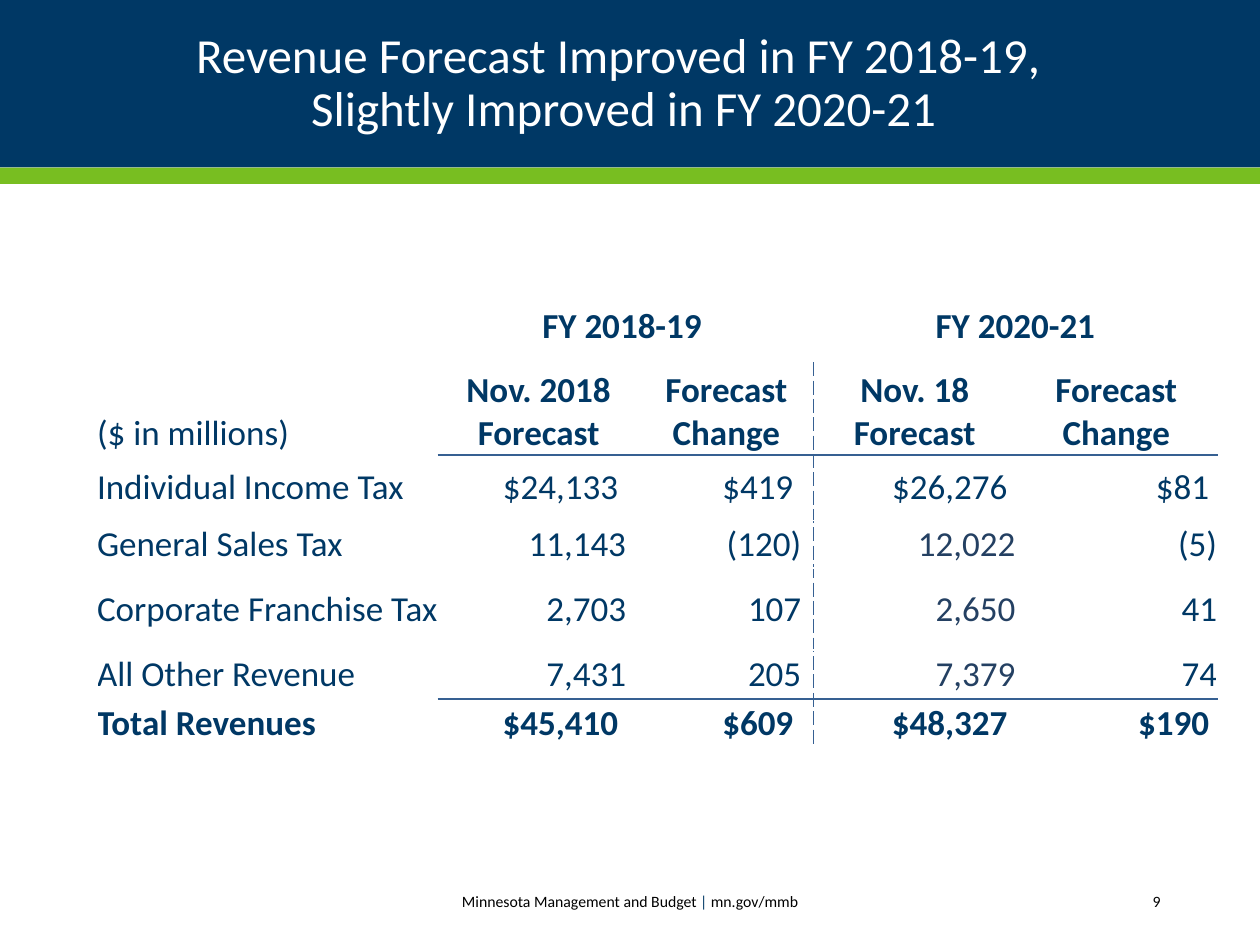
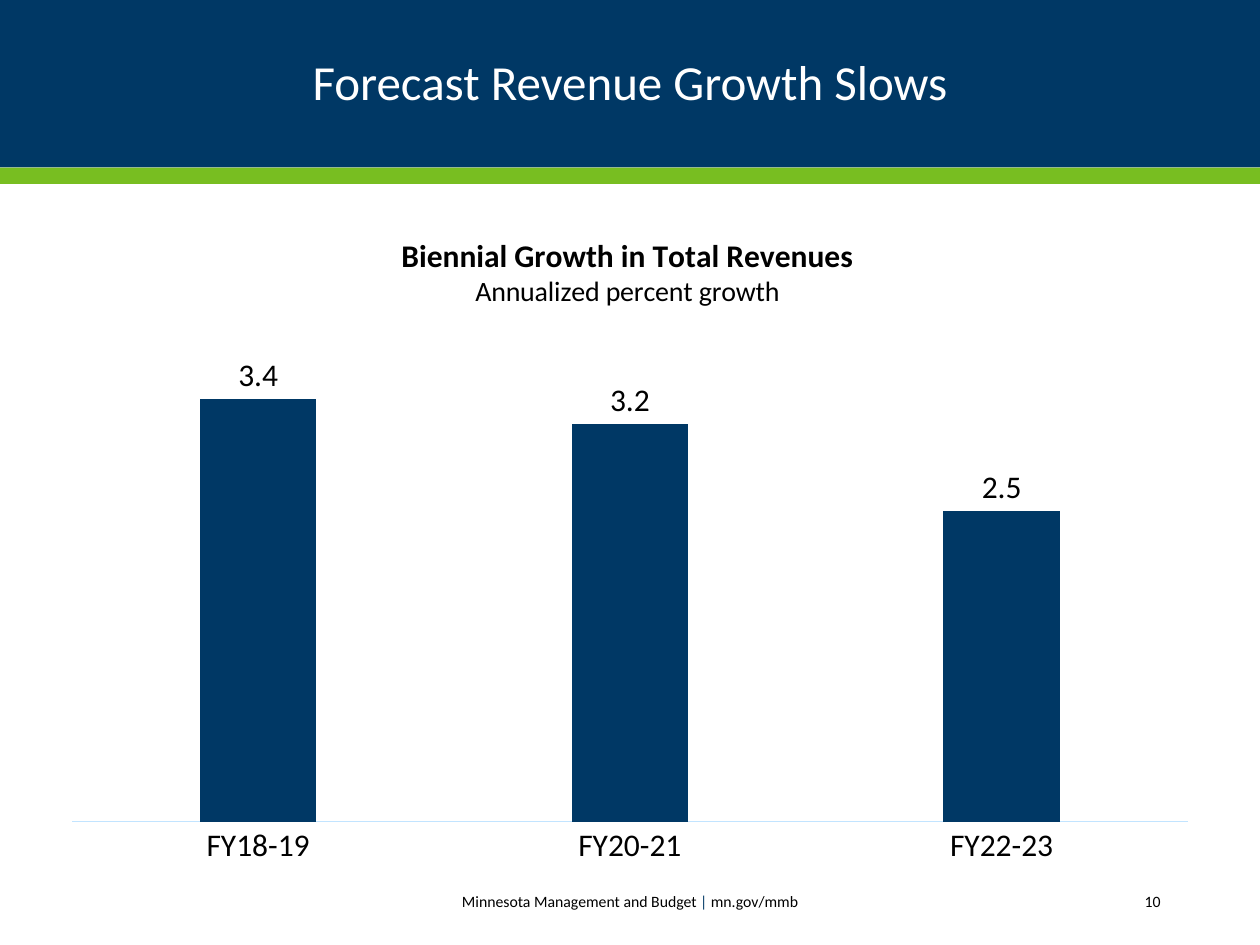
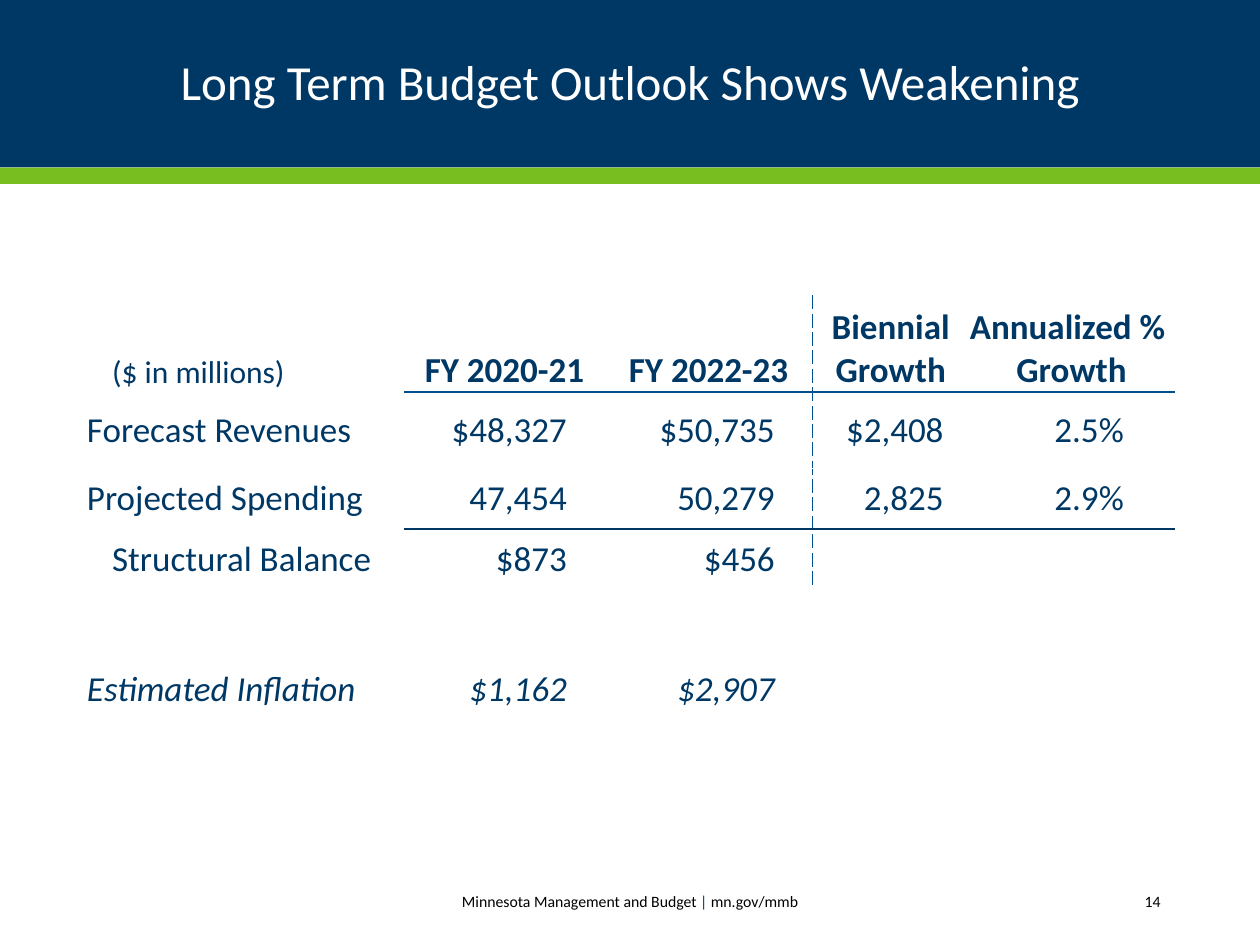
from dataclasses import dataclass, field

from lxml.etree import SubElement
from pptx import Presentation
from pptx.chart.data import CategoryChartData
from pptx.dml.color import RGBColor
from pptx.enum.chart import XL_CHART_TYPE as ChartType
from pptx.enum.chart import XL_LABEL_POSITION as LabelPosition
from pptx.enum.chart import XL_TICK_MARK as TickMark
from pptx.enum.shapes import MSO_SHAPE as Preset
from pptx.enum.text import MSO_ANCHOR as Anchor
from pptx.enum.text import PP_ALIGN as Align
from pptx.oxml import parse_xml
from pptx.oxml.ns import nsdecls, qn
from pptx.util import Inches, Pt

FONT = "Calibri"
COLORS = {
    "navy": "003865",
    "green": "78BE21",
    "white": "FFFFFF",
    "black": "000000",
    "steel": "366092",
    "slate": "244062",
    "blue": "004F8E",
    "pale": "C2E4FF",
}


@dataclass(frozen=True)
class Band:
    top: float
    height: float
    color: str


@dataclass(frozen=True)
class Rule:
    color: str
    width: float = 1
    dash: str = "solid"


@dataclass(frozen=True)
class BudgetTable:
    left: float
    top: float
    widths: list[float]
    heights: list[float]
    rows: list[list[str]]
    header_rows: int
    right_insets: list[float]
    divider: Rule
    divider_rows: int
    underlines: dict[int, Rule]
    label_insets: dict[int, float] = field(default_factory=dict)
    merges: list[tuple[int, int, int]] = field(default_factory=list)
    bold_rows: set[int] = field(default_factory=set)
    italic_rows: set[int] = field(default_factory=set)
    bottom_rows: set[int] = field(default_factory=set)
    exceptions: dict[tuple[int, int], dict] = field(default_factory=dict)


BANDS = [Band(0, 1.33, "navy"), Band(1.33, 0.13, "green")]
DIVIDER_COLUMN = 2

REVENUE_TABLE = BudgetTable(
    left=0.77,
    top=2.3,
    widths=[2.71, 1.59, 1.39, 1.6, 1.6],
    heights=[0.58, 0.73, 0.52, 0.38, 0.65, 0.39, 0.38],
    rows=[
        ["", "FY 2018-19 ", "", "FY 2020-21", ""],
        ["($ in millions)", "Nov. 2018 Forecast", "Forecast Change",
         "Nov. 18 Forecast", "Forecast Change"],
        ["Individual Income Tax", "$24,133 ", "$419 ", "$26,276 ", "$81 "],
        ["General Sales Tax", "11,143", "(120)", "12,022", "(5)"],
        ["Corporate Franchise Tax", "2,703", "107", "2,650", "41"],
        ["All Other Revenue", "7,431", "205", "7,379", "74"],
        ["Total Revenues", "$45,410 ", "$609 ", "$48,327 ", "$190 "],
    ],
    header_rows=2,
    right_insets=[0, 0.1, 0.1, 0, 0],
    divider=Rule("steel", 0.5, "dash"),
    divider_rows=7,
    underlines={1: Rule("steel"), 5: Rule("steel")},
    merges=[(0, 1, 2), (0, 3, 4)],
    bold_rows={6},
    bottom_rows={1},
    exceptions={(row, 3): {"color": "slate"} for row in (3, 4, 5)},
)

OUTLOOK_TABLE = BudgetTable(
    left=0.69,
    top=2.35,
    widths=[2.52, 1.59, 1.65, 1.24, 1.63],
    heights=[0.76, 0.61] + [0.48] * 4,
    rows=[
        ["($ in millions)", "FY 2020-21", "FY 2022-23",
         "Biennial\nGrowth", "Annualized % \nGrowth"],
        ["Forecast Revenues", "$48,327", "$50,735", "$2,408", "2.5%"],
        ["Projected Spending", "47,454", "50,279", "2,825", "2.9%"],
        ["Structural Balance", "$873", "$456", "", ""],
        [""] * 5,
        ["Estimated Inflation", "$1,162", "$2,907", "", ""],
    ],
    header_rows=1,
    right_insets=[0.01, 0.3, 0.3, 0.2, 0.4],
    divider=Rule("blue", 1, "sysDash"),
    divider_rows=4,
    underlines={0: Rule("blue"), 2: Rule("navy")},
    label_insets={0: 0.2, 3: 0.2},
    italic_rows={5},
    bottom_rows={0, 5},
    exceptions={(0, 0): {"size": 18}},
)


def rgb(color: str) -> RGBColor:
    return RGBColor.from_string(COLORS[color])


def set_font(font, size: float, color: str, bold: bool = False, italic: bool = False) -> None:
    font.name = FONT
    font.size = Pt(size)
    font.bold = bold
    font.italic = italic
    font.color.rgb = rgb(color)


def write(para, text: str, *, size: float = 20, color: str = "navy", bold: bool = False,
          italic: bool = False, align: Align | None = None) -> None:
    if align is not None:
        para.alignment = align
    for index, line in enumerate(text.split("\n")):
        if index:
            para.add_line_break()
        span = para.add_run()
        span.text = line
        set_font(span.font, size, color, bold, italic)


def add_box(page, left: float, top: float, width: float, height: float):
    box = page.shapes.add_textbox(Inches(left), Inches(top), Inches(width), Inches(height))
    box.text_frame.word_wrap = True
    box.text_frame.vertical_anchor = Anchor.MIDDLE
    return box.text_frame.paragraphs[0]


def add_page(deck, title: str, number: int, title_left: float = 0.69, title_width: float = 8.62):
    page = deck.slides.add_slide(deck.slide_layouts[6])
    for band in BANDS:
        shape = page.shapes.add_shape(
            Preset.RECTANGLE, 0, Inches(band.top), deck.slide_width, Inches(band.height))
        shape.shadow.inherit = False
        shape.fill.solid()
        shape.fill.fore_color.rgb = rgb(band.color)
        shape.line.fill.background()
    para = add_box(page, title_left, 0.17, title_width, 1)
    para.line_spacing = 0.9
    write(para, title, size=28, color="white", align=Align.CENTER)
    para = add_box(page, 2.71, 6.95, 4.58, 0.4)
    for text, color in [("Minnesota Management and Budget ", "black"), ("|", "navy"),
                        (" mn.gov/mmb", "black")]:
        write(para, text, size=9, color=color, align=Align.CENTER)
    para = add_box(page, 8.11, 6.95, 1.2, 0.4)
    write(para, str(number), size=9, color="black", align=Align.RIGHT)
    return page


def draw_border(cell, side: str, rule: Rule) -> None:
    properties = cell._tc.get_or_add_tcPr()
    line = SubElement(properties, qn(f"a:ln{side}"), w=str(Pt(rule.width)))
    fill = SubElement(line, qn("a:solidFill"))
    SubElement(fill, qn("a:srgbClr"), val=COLORS[rule.color])
    SubElement(line, qn("a:prstDash"), val=rule.dash)


def draw_borders(cell, design: BudgetTable, row: int, column: int) -> None:
    if row < design.divider_rows:
        if column == DIVIDER_COLUMN + 1:
            draw_border(cell, "L", design.divider)
        if column == DIVIDER_COLUMN:
            draw_border(cell, "R", design.divider)
    if column:
        for side, ruled_row in (("T", row - 1), ("B", row)):
            if ruled_row in design.underlines:
                draw_border(cell, side, design.underlines[ruled_row])


def fill_cell(cell, design: BudgetTable, row: int, column: int) -> None:
    header = row < design.header_rows
    draw_borders(cell, design, row, column)
    cell.fill.background()
    cell.margin_top = cell.margin_bottom = 0
    cell.margin_left = Inches(0 if column else design.label_insets.get(row, 0))
    cell.margin_right = Inches(0 if header else design.right_insets[column])
    cell.vertical_anchor = Anchor.BOTTOM if row in design.bottom_rows else Anchor.MIDDLE
    text = design.rows[row][column]
    if not text:
        return
    if not column:
        align = Align.LEFT
    else:
        align = Align.CENTER if header else Align.RIGHT
    style = {
        "bold": row in design.bold_rows or (header and column > 0),
        "italic": row in design.italic_rows,
        "align": align,
    } | design.exceptions.get((row, column), {})
    write(cell.text_frame.paragraphs[0], text, **style)


def add_budget_table(page, design: BudgetTable) -> None:
    frame = page.shapes.add_table(
        len(design.heights), len(design.widths), Inches(design.left), Inches(design.top),
        Inches(sum(design.widths)), Inches(sum(design.heights)))
    table = frame.table
    table.first_row = table.horz_banding = False
    for column, width in zip(table.columns, design.widths):
        column.width = Inches(width)
    for row, height in zip(table.rows, design.heights):
        row.height = Inches(height)
    for row, first, last in design.merges:
        table.cell(row, first).merge(table.cell(row, last))
    for row in range(len(design.heights)):
        for column in range(len(design.widths)):
            fill_cell(table.cell(row, column), design, row, column)


def manual_layout(target: str, **values: float):
    modes = "".join(f'<c:{axis}Mode val="edge"/>' for axis in "xy")
    sizes = "".join(f'<c:{name} val="{value}"/>' for name, value in values.items())
    return parse_xml(f'<c:layout {nsdecls("c")}><c:manualLayout>{target}{modes}{sizes}'
                     "</c:manualLayout></c:layout>")


def place(element, layout) -> None:
    for old in element.findall(qn("c:layout")):
        element.remove(old)
    text = element.find(qn("c:tx"))
    element.insert(0 if text is None else 1, layout)


def add_growth_chart(page) -> None:
    data = CategoryChartData(number_format="0.0")
    data.categories = ["FY18-19", "FY20-21", "FY22-23"]
    data.add_series("Series 1", [3.4, 3.2, 2.5])
    chart = page.shapes.add_chart(
        ChartType.COLUMN_CLUSTERED, Inches(0.39), Inches(1.62), Inches(9.22), Inches(5.33),
        data).chart
    set_font(chart.font, 10, "navy")
    chart.has_legend = False
    chart.has_title = True
    frame = chart.chart_title.text_frame
    write(frame.paragraphs[0], "Biennial Growth in Total Revenues",
          size=18, color="black", bold=True)
    write(frame.add_paragraph(), "Annualized percent growth", size=16, color="black")
    chart.chart_title.include_in_layout = False
    place(chart.chart_title._element, manual_layout("", x=0.3, y=0.04))
    plot_area = chart._chartSpace.chart.plotArea
    place(plot_area, manual_layout('<c:layoutTarget val="inner"/>', x=0.02, y=0.18, w=0.96, h=0.74))

    category_axis = chart.category_axis
    category_axis.major_tick_mark = TickMark.NONE
    category_axis.minor_tick_mark = TickMark.NONE
    set_font(category_axis.tick_labels.font, 18, "black")
    category_axis.format.line.color.rgb = rgb("pale")
    category_axis.format.line.width = Pt(0.75)
    value_axis = chart.value_axis
    value_axis.visible = False
    value_axis.has_major_gridlines = False
    value_axis.minimum_scale = 0
    value_axis.maximum_scale = 4

    plot = chart.plots[0]
    plot.gap_width = 219
    plot.overlap = -27
    plot.vary_by_categories = False
    fill = plot.series[0].format.fill
    fill.solid()
    fill.fore_color.rgb = rgb("navy")
    plot.has_data_labels = True
    labels = plot.data_labels
    labels.show_value = True
    labels.number_format = "0.0"
    labels.number_format_is_linked = False
    labels.position = LabelPosition.OUTSIDE_END
    set_font(labels.font, 18, "black")


def main() -> None:
    deck = Presentation()
    deck.slide_width = Inches(10)
    deck.slide_height = Inches(7.5)

    page = add_page(
        deck, "Revenue Forecast Improved in FY 2018-19, \nSlightly Improved in FY 2020-21", 9,
        title_left=0.58, title_width=8.74)
    add_budget_table(page, REVENUE_TABLE)

    page = add_page(deck, "Forecast Revenue Growth Slows", 10)
    add_growth_chart(page)

    page = add_page(deck, "Long Term Budget Outlook Shows Weakening", 14)
    add_budget_table(page, OUTLOOK_TABLE)

    deck.save("out.pptx")


if __name__ == "__main__":
    main()
